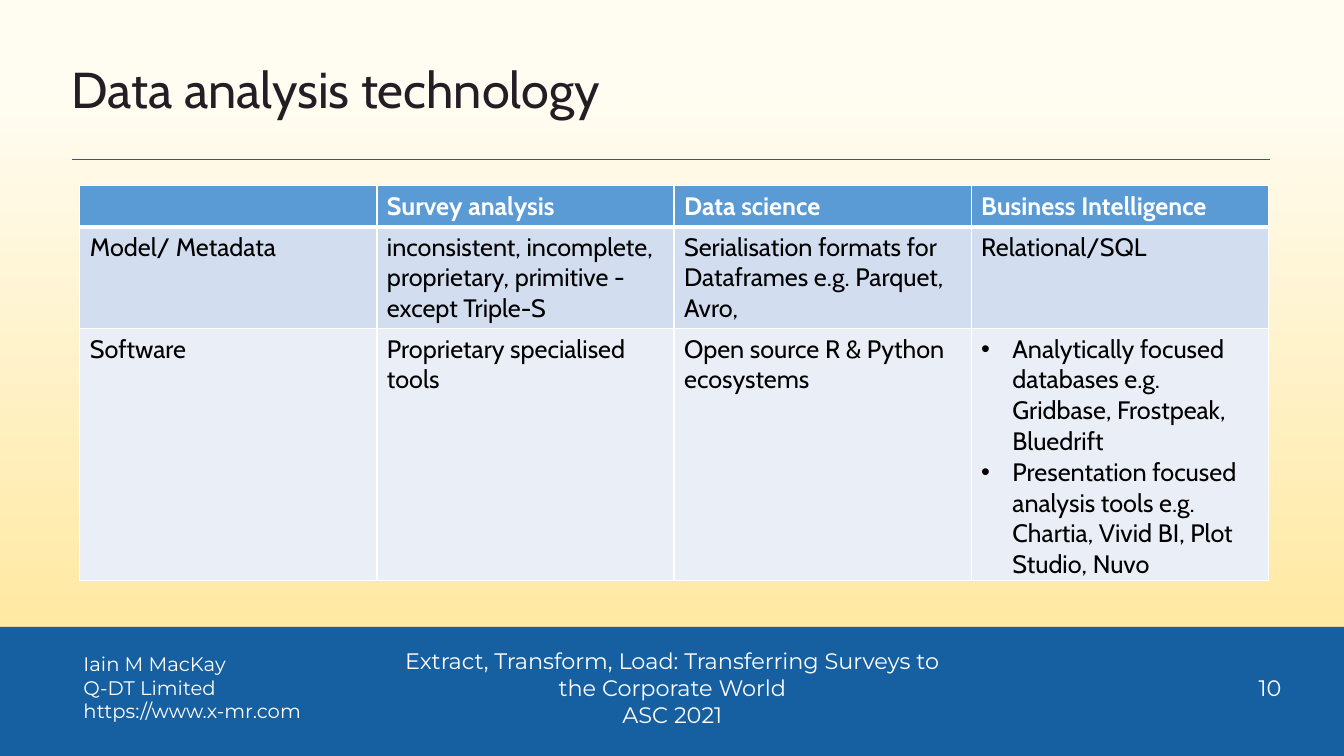
from dataclasses import dataclass

from lxml.etree import SubElement
from pptx import Presentation
from pptx.dml.color import RGBColor as Rgb
from pptx.enum.shapes import MSO_CONNECTOR as Connector, MSO_SHAPE as Shape
from pptx.enum.text import MSO_ANCHOR as Anchor, PP_ALIGN as Align
from pptx.oxml.ns import qn
from pptx.util import Inches, Pt

COLUMNS, ROWS = 160, 90  # grid over the whole slide


@dataclass(frozen=True)
class Theme:
    sky: str = "FFFCF2"
    sand: str = "FFE699"
    band: str = "1660A2"
    ink: str = "241E24"
    black: str = "000000"
    white: str = "FFFFFF"
    header: str = "5B9BD5"
    stripes: tuple = ("D2DEEF", "EAEFF7")
    heading_font: str = "Cabin"
    footer_font: str = "Montserrat"
    title_size: int = 36
    table_size: int = 18
    footer_size: int = 16
    contact_size: int = 14


class Deck:
    def __init__(self, theme):
        self.theme = theme
        self.prs = Presentation()
        self.prs.slide_width, self.prs.slide_height = Inches(13.33), Inches(7.5)
        self.slide = self.prs.slides.add_slide(self.prs.slide_layouts[6])
        self.shapes = self.slide.shapes

    def x(self, columns):
        return round(self.prs.slide_width * columns / COLUMNS)

    def y(self, rows):
        return round(self.prs.slide_height * rows / ROWS)

    def area(self, left, top, width, height):
        return self.x(left), self.y(top), self.x(width), self.y(height)

    def background(self):
        fill = self.slide.background.fill
        fill.gradient()
        fill.gradient_angle = 270
        stops = ((0.12, self.theme.sky), (0.91, self.theme.sand))
        for stop, (position, color) in zip(fill.gradient_stops, stops):
            stop.position = position
            stop.color.rgb = Rgb.from_string(color)

    def band(self, *area, color):
        band = self.shapes.add_shape(Shape.RECTANGLE, *self.area(*area))
        band.shadow.inherit = False
        band.fill.solid()
        band.fill.fore_color.rgb = Rgb.from_string(color)
        band.line.fill.background()

    def rule(self, left, right, row, color):
        rule = self.shapes.add_connector(
            Connector.STRAIGHT, self.x(left), self.y(row), self.x(right), self.y(row))
        rule.line.color.rgb = Rgb.from_string(color)
        rule.line.width = Pt(0.5)
        SubElement(rule._element.spPr, qn("a:effectLst"))

    def fill_text(self, frame, lines, font, size, color, bold=False, align=None, bullets=False):
        for number, line in enumerate(lines):
            paragraph = frame.paragraphs[0] if number == 0 else frame.add_paragraph()
            paragraph.text = line
            if bullets:
                props = paragraph._p.get_or_add_pPr()
                props.set("marL", str(Inches(0.31)))
                props.set("indent", str(-Inches(0.31)))
                SubElement(props, qn("a:buFont"), typeface="Arial")
                SubElement(props, qn("a:buChar"), char="•")
            if align is not None:
                paragraph.alignment = align
            paragraph.font.name = font
            paragraph.font.size = Pt(size)
            paragraph.font.bold = bold
            paragraph.font.color.rgb = Rgb.from_string(color)

    def title(self, *area, text):
        frame = self.shapes.add_textbox(*self.area(*area)).text_frame
        frame.word_wrap = True
        frame.vertical_anchor = Anchor.MIDDLE
        frame.margin_left = frame.margin_right = frame.margin_top = frame.margin_bottom = 0
        self.fill_text(frame, [text], self.theme.heading_font, self.theme.title_size,
                       self.theme.ink)
        frame.paragraphs[0].line_spacing = 0.9

    def footer(self, *area, lines, size, align):
        frame = self.shapes.add_textbox(*self.area(*area)).text_frame
        frame.word_wrap = True
        self.fill_text(frame, lines, self.theme.footer_font, size, self.theme.white, align=align)

    def borders(self, cell, widths):
        props = cell._tc.get_or_add_tcPr()
        for side, width in widths.items():
            edge = SubElement(props, qn(f"a:ln{side}"), w=str(Pt(width)))
            SubElement(SubElement(edge, qn("a:solidFill")), qn("a:srgbClr"), val=self.theme.white)

    def table(self, left, top, width, heights, content):
        theme = self.theme
        table = self.shapes.add_table(
            len(content), len(content[0]), *self.area(left, top, width, sum(heights))).table
        table.first_row = table.horz_banding = False
        for column in table.columns:
            column.width = self.x(width / len(content[0]))
        for r, (height, texts) in enumerate(zip(heights, content)):
            table.rows[r].height = self.y(height)
            is_header = r == 0
            fill = theme.header if is_header else theme.stripes[(r - 1) % 2]
            for c, text in enumerate(texts):
                cell = table.cell(r, c)
                self.borders(cell, {"L": 1, "R": 1, "T": 3 if r == 1 else 1,
                                    "B": 3 if is_header else 1})
                cell.fill.solid()
                cell.fill.fore_color.rgb = Rgb.from_string(fill)
                bullets = isinstance(text, list)
                self.fill_text(cell.text_frame, text if bullets else [text],
                               theme.heading_font, theme.table_size,
                               theme.white if is_header else theme.black,
                               bold=is_header, bullets=bullets)


TECHNOLOGY = [
    ["", "Survey analysis", "Data science", "Business Intelligence"],
    ["Model/ Metadata",
     "inconsistent, incomplete, proprietary, primitive - except Triple-S",
     "Serialisation formats for Dataframes e.g. Parquet, Avro,",
     "Relational/SQL"],
    ["Software",
     "Proprietary specialised tools",
     "Open source R & Python ecosystems",
     ["Analytically focused databases e.g. Gridbase, Frostpeak, Bluedrift",
      "Presentation focused analysis tools e.g. Chartia, Vivid BI, Plot Studio, Nuvo"]],
]


def main():
    theme = Theme()
    deck = Deck(theme)

    # Backdrop
    deck.background()
    deck.band(0, 74.64, COLUMNS, ROWS - 74.64, color=theme.band)
    deck.rule(8.52, 151.2, 18.96, theme.band)

    # Footer
    deck.footer(8.76, 77.04, 44.4, 9.72, size=theme.contact_size, align=Align.LEFT,
                lines=["Iain M MacKay", "Q-DT Limited", "https://www.x-mr.com"])
    deck.footer(46.8, 76.44, 66.5, 10.92, size=theme.footer_size, align=Align.CENTER,
                lines=["Extract, Transform, Load: Transferring Surveys to the Corporate World",
                       "ASC 2021"])
    deck.footer(126.5, 79.68, 27.24, 4.44, size=theme.footer_size, align=Align.RIGHT,
                lines=["10"])

    # Title and comparison table
    deck.title(8.52, 4.8, 118, 12.24, text="Data analysis technology")
    deck.table(9.5, 22.1, 141.5, [4.9, 12.15, 26.9], TECHNOLOGY)

    deck.prs.save("out.pptx")


if __name__ == "__main__":
    main()
